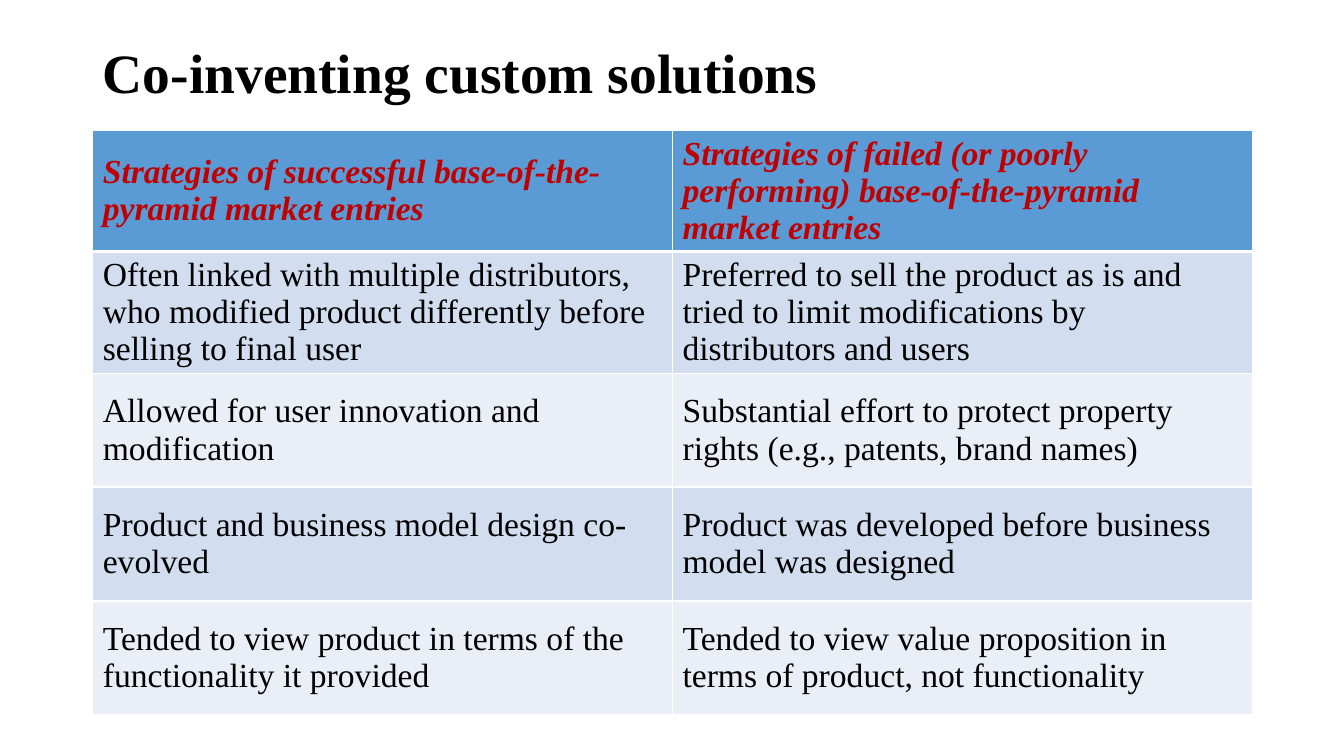
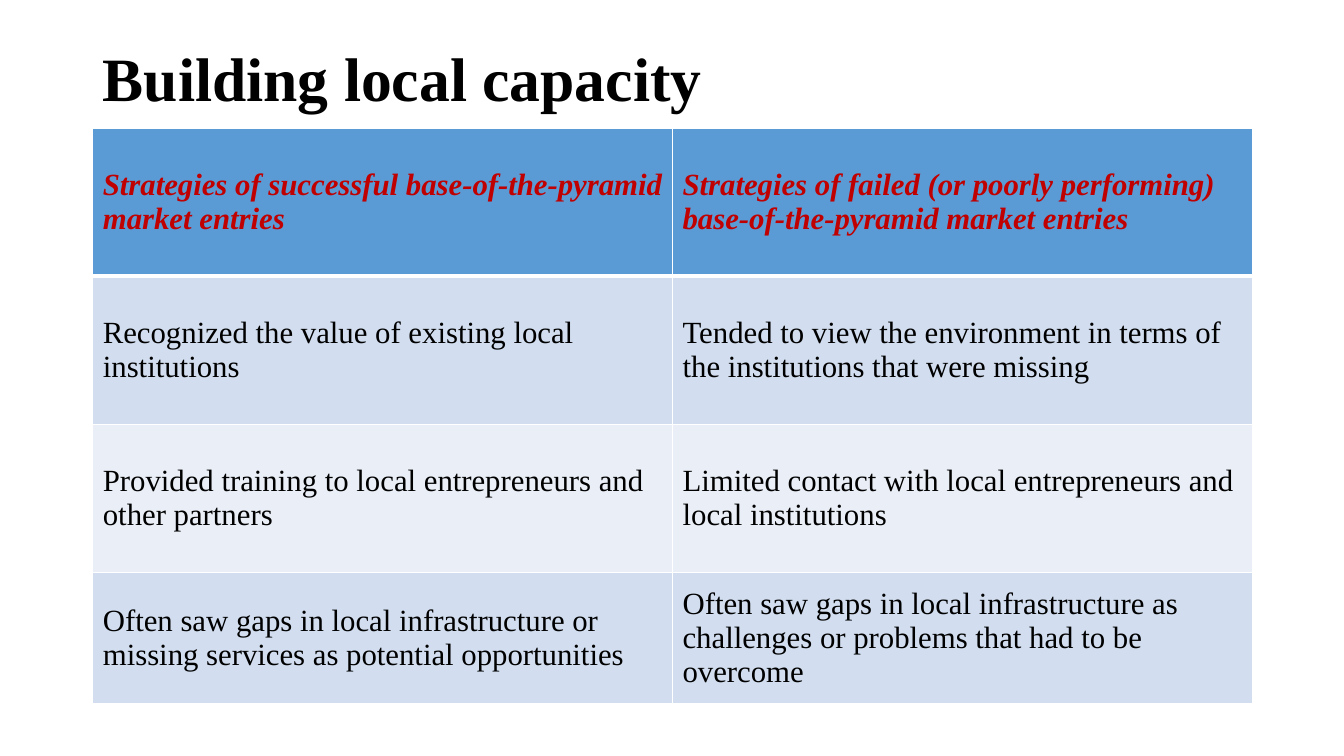
from dataclasses import dataclass

from lxml import etree
from pptx import Presentation
from pptx.dml.color import RGBColor
from pptx.enum.text import MSO_ANCHOR, MSO_AUTO_SIZE, PP_ALIGN
from pptx.oxml.ns import qn
from pptx.slide import Slide
from pptx.table import _Cell
from pptx.util import Inches, Pt

MIDDLE = MSO_ANCHOR.MIDDLE
LEFT = PP_ALIGN.LEFT
NO_AUTOFIT = MSO_AUTO_SIZE.NONE

BLACK = RGBColor(0x00, 0x00, 0x00)
WHITE = RGBColor(0xFF, 0xFF, 0xFF)
RED = RGBColor(0xC0, 0x00, 0x00)
HEADER_BLUE = RGBColor(0x5B, 0x9B, 0xD5)
BANDS = (RGBColor(0xD2, 0xDE, 0xEF), RGBColor(0xEA, 0xEF, 0xF7))

FONT = "Times New Roman"
SLIDE_WIDTH, SLIDE_HEIGHT = 13.33, 7.5
MARGIN, CONTENT_WIDTH = 0.92, 11.5
TITLE_TOP = 0.4
THIN, THICK = 1, 3
TITLE_ONLY_LAYOUT = 5

HEADINGS = (
    "Strategies of successful base-of-the-pyramid market entries",
    "Strategies of failed (or poorly performing) base-of-the-pyramid market entries",
)


@dataclass(frozen=True)
class Comparison:
    title: str
    title_size: float
    title_height: float
    table_top: float
    text_size: float
    row_heights: tuple[float, ...]
    rows: tuple[tuple[str, str], ...]


COMPARISONS = (
    Comparison(
        "Co-inventing custom solutions", 39.6, 0.7, 1.29, 24, (1.13,) * 5,
        (
            ("Often linked with multiple distributors, who modified product "
             "differently before selling to final user",
             "Preferred to sell the product as is and tried to limit "
             "modifications by distributors and users"),
            ("Allowed for user innovation and modification",
             "Substantial effort to protect property rights "
             "(e.g., patents, brand names)"),
            ("Product and business model design co-evolved",
             "Product was developed before business model was designed"),
            ("Tended to view product in terms of the functionality it provided",
             "Tended to view value proposition in terms of product, "
             "not functionality"),
        ),
    ),
    Comparison(
        "Building local capacity", 44, 0.81, 1.27, 22, (1.47, 1.47, 1.47, 1.3),
        (
            ("Recognized the value of existing local institutions",
             "Tended to view the environment in terms of the institutions "
             "that were missing"),
            ("Provided training to local entrepreneurs and other partners",
             "Limited contact with local entrepreneurs and local institutions"),
            ("Often saw gaps in local infrastructure or missing services "
             "as potential opportunities",
             "Often saw gaps in local infrastructure as challenges or problems "
             "that had to be overcome"),
        ),
    ),
)


def write_text(frame, text: str, size: float, color: RGBColor,
               bold: bool, italic: bool = False, spacing: float = 1.0) -> None:
    para = frame.paragraphs[0]
    para.alignment = LEFT
    para.line_spacing = spacing
    span = para.add_run()
    span.text = text
    span.font.name = FONT
    span.font.size = Pt(size)
    span.font.bold = bold
    span.font.italic = italic
    span.font.color.rgb = color


def set_borders(cell: _Cell, top: int, bottom: int) -> None:
    """Draw white cell borders; call before filling, as the schema puts lines first."""
    properties = cell._tc.get_or_add_tcPr()
    widths = {"a:lnL": THIN, "a:lnR": THIN, "a:lnT": top, "a:lnB": bottom}
    for tag, width in widths.items():
        line = etree.SubElement(properties, qn(tag), w=str(Pt(width)))
        fill = etree.SubElement(line, qn("a:solidFill"))
        etree.SubElement(fill, qn("a:srgbClr"), val=str(WHITE))


def add_title(page: Slide, comparison: Comparison) -> None:
    title = page.shapes.title
    title.left, title.top = Inches(MARGIN), Inches(TITLE_TOP)
    title.width, title.height = Inches(CONTENT_WIDTH), Inches(comparison.title_height)
    frame = title.text_frame
    frame.word_wrap = True
    frame.auto_size = NO_AUTOFIT
    frame.vertical_anchor = MIDDLE
    write_text(frame, comparison.title, comparison.title_size, BLACK,
               bold=True, spacing=0.9)


def add_comparison_table(page: Slide, comparison: Comparison) -> None:
    rows = (HEADINGS, *comparison.rows)
    table = page.shapes.add_table(
        len(rows), len(HEADINGS), Inches(MARGIN), Inches(comparison.table_top),
        Inches(CONTENT_WIDTH), Inches(sum(comparison.row_heights)),
    ).table
    for column in table.columns:
        column.width = Inches(CONTENT_WIDTH / len(HEADINGS))
    for row_index, (texts, height) in enumerate(zip(rows, comparison.row_heights)):
        table.rows[row_index].height = Inches(height)
        is_header = row_index == 0
        band = HEADER_BLUE if is_header else BANDS[(row_index - 1) % len(BANDS)]
        for column_index, text in enumerate(texts):
            cell = table.cell(row_index, column_index)
            cell.vertical_anchor = MIDDLE
            set_borders(cell, top=THICK if row_index == 1 else THIN,
                        bottom=THICK if is_header else THIN)
            cell.fill.solid()
            cell.fill.fore_color.rgb = band
            write_text(cell.text_frame, text, comparison.text_size,
                       RED if is_header else BLACK, is_header, is_header)


def main() -> None:
    deck = Presentation()
    deck.slide_width, deck.slide_height = Inches(SLIDE_WIDTH), Inches(SLIDE_HEIGHT)
    for comparison in COMPARISONS:
        page = deck.slides.add_slide(deck.slide_layouts[TITLE_ONLY_LAYOUT])
        add_title(page, comparison)
        add_comparison_table(page, comparison)
    deck.save("out.pptx")


if __name__ == "__main__":
    main()
